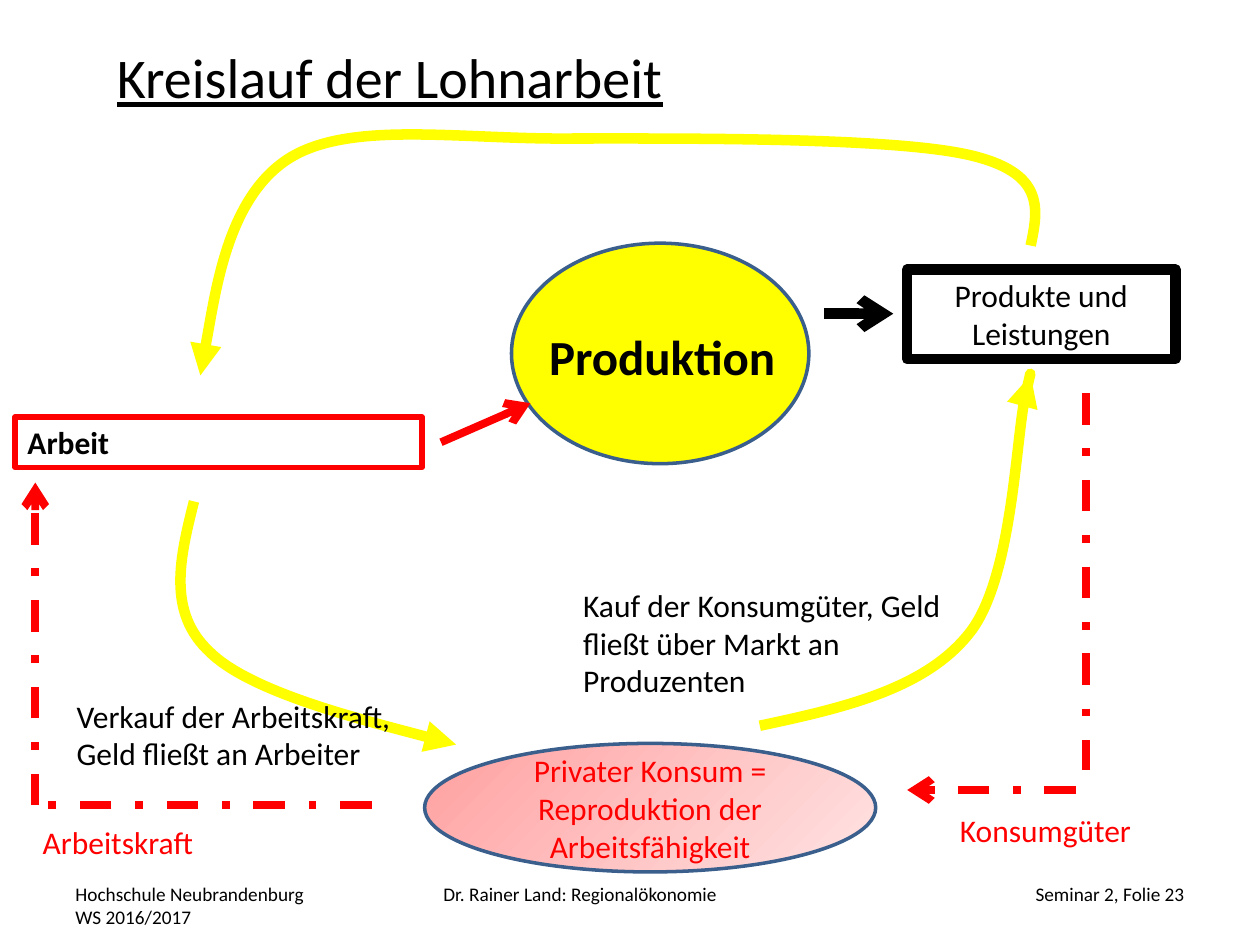
"""Builds the slide on the cycle of wage labour."""
import pptx
import pptx.util
import pptx.dml.color
import pptx.enum.dml
import pptx.enum.shapes
import pptx.enum.text
import pptx.oxml
import pptx.oxml.ns

Inches = pptx.util.Inches
Pt = pptx.util.Pt
MSO_SHAPE = pptx.enum.shapes.MSO_SHAPE
ALIGN = pptx.enum.text.PP_ALIGN
ANCHOR = pptx.enum.text.MSO_ANCHOR
DASH = pptx.enum.dml.MSO_LINE.DASH_DOT
NAMESPACE = 'xmlns:a="http://schemas.openxmlformats.org/drawingml/2006/main"'

COLORS = {"black": "000000", "red": "FF0000", "yellow": "FFFF00", "blue": "3A5F8C",
          "rose": "FFA0A0", "pale": "FFE3E3"}

HEADINGS = [
    ("Kreislauf der Lohnarbeit", (0.83, 0.3, 8.67, 0.61),
     {"size": 32, "underline": True, "anchor": ANCHOR.MIDDLE}),
    ("Hochschule Neubrandenburg\vWS 2016/2017", (0.5, 6.95, 2.33, 0.4), {"size": 11}),
    ("Dr. Rainer Land: Regionalökonomie", (3.42, 6.95, 3.17, 0.4), {"size": 11}),
    ("Seminar 2, Folie 23", (7.17, 6.95, 2.33, 0.4), {"size": 11, "align": ALIGN.RIGHT}),
]

SHAPES = [
    {"kind": MSO_SHAPE.OVAL, "box": (4.06, 1.93, 2.36, 1.75), "fill": ["yellow"],
     "line": ("blue", 2)},
    {"kind": MSO_SHAPE.RECTANGLE, "box": (0.12, 3.31, 3.23, 0.4), "line": ("red", 3),
     "text": "Arbeit", "style": {"bold": True}},
    {"kind": MSO_SHAPE.RECTANGLE, "box": (7.2, 2.14, 2.13, 0.71), "line": ("black", 6),
     "text": "Produkte und Leistungen", "style": {"align": ALIGN.CENTER}},
    {"kind": MSO_SHAPE.OVAL, "box": (3.37, 5.9, 3.58, 1.02), "fill": ["rose", "pale"],
     "line": ("blue", 2), "text": "Privater Konsum = Reproduktion der Arbeitsfähigkeit",
     "style": {"color": "red", "align": ALIGN.CENTER, "anchor": ANCHOR.MIDDLE}},
]

LINES = [
    ((3.5, 3.51), (4.21, 3.2), "red", 4.5, None, "arrow"),
    ((6.54, 2.49), (7.09, 2.49), "black", 6, None, "arrow"),
    ((8.62, 3.12), (8.62, 6.11), "red", 4.5, DASH, None),
    ((8.54, 6.27), (7.2, 6.27), "red", 4.5, DASH, "arrow"),
    ((0.28, 6.39), (0.28, 3.83), "red", 4.5, DASH, "arrow"),
    ((2.95, 6.39), (0.28, 6.39), "red", 4.5, DASH, None),
]

MONEY_FLOWS = [
    [(6.03, 5.76), (6.69, 5.62), (7.34, 5.47), (7.69, 5.03), (8.04, 4.6), (8.06, 3.47),
     (8.14, 3.13), (8.22, 2.78), (8.18, 2.98), (8.18, 2.98)],
    [(8.18, 1.95), (8.24, 1.66), (8.3, 1.37), (7.69, 1.23), (7.08, 1.09), (5.45, 1.1),
     (4.55, 1.1), (3.65, 1.11), (2.78, 0.95), (2.29, 1.26), (1.79, 1.58), (1.59, 2.98),
     (1.59, 2.98)],
    [(1.54, 3.98), (1.43, 4.42), (1.32, 4.86), (1.67, 5.18), (2.01, 5.51), (3.62, 5.91),
     (3.62, 5.91)],
]

LABELS = [
    ("Produktion", (4.21, 2.54, 2.09, 0.57),
     {"size": 28, "bold": True, "align": ALIGN.CENTER}),
    ("Konsumgüter", (7.52, 6.39, 1.81, 0.4), {"color": "red"}),
    ("Arbeitskraft", (0.24, 6.48, 2.68, 0.4), {"color": "red"}),
    ("Kauf der Konsumgüter, Geld fließt über Markt an Produzenten",
     (4.53, 4.6, 3.23, 1.01), {}),
    ("Verkauf der Arbeitskraft, Geld fließt an Arbeiter", (0.51, 5.48, 2.76, 0.71), {}),
]


def rgb(name):
    return pptx.dml.color.RGBColor.from_string(COLORS[name])


def write(shape, text, size=18, color="black", bold=False, underline=False,
          align=ALIGN.LEFT, anchor=ANCHOR.TOP):
    frame = shape.text_frame
    frame.word_wrap = True
    frame.vertical_anchor = anchor
    paragraph = frame.paragraphs[0]
    paragraph.text = text
    paragraph.alignment = align
    font = paragraph.font
    font.name, font.size, font.bold = "Calibri", Pt(size), bold
    font.color.rgb = rgb(color)
    if underline:
        for run in paragraph.runs:
            run.font.underline = True


def add_texts(slide, texts):
    for text, box, style in texts:
        write(slide.shapes.add_textbox(*map(Inches, box)), text, **style)


def style_line(line, color, width, dash=None, head=None):
    line.color.rgb = rgb(color)
    line.width = Pt(width)
    if dash:
        line.dash_style = dash
    if head:
        line._get_or_add_ln().append(
            pptx.oxml.parse_xml(f'<a:tailEnd {NAMESPACE} type="{head}"/>'))


def add_figure(slide, kind, box, line, fill=(), text="", style=None):
    shape = slide.shapes.add_shape(kind, *map(Inches, box))
    shape.shadow.inherit = False
    style_line(shape.line, *line)
    if len(fill) == 2:
        shape.fill.gradient()
        shape.fill.gradient_angle = 315
        for stop, color in zip(shape.fill.gradient_stops, fill):
            stop.color.rgb = rgb(color)
    elif fill:
        shape.fill.solid()
        shape.fill.fore_color.rgb = rgb(fill[0])
    else:
        shape.fill.background()
    if text:
        write(shape, text, **(style or {}))


def add_arrow(slide, start, end, color, width, dash, head):
    connector = slide.shapes.add_connector(
        pptx.enum.shapes.MSO_CONNECTOR.STRAIGHT, *map(Inches, start + end))
    connector._element.spPr.append(pptx.oxml.parse_xml(f"<a:effectLst {NAMESPACE}/>"))
    style_line(connector.line, color, width, dash, head)


def add_money_flow(slide, controls):
    points = [tuple(map(Inches, point)) for point in controls]
    builder = slide.shapes.build_freeform(*points[0])
    builder.add_line_segments(points[1:] + points[-1:], close=False)
    shape = builder.convert_to_shape()
    segments = list(shape._element.iter(pptx.oxml.ns.qn("a:lnTo")))
    for index in range(0, len(controls) - 1, 3):
        curve = pptx.oxml.parse_xml(f"<a:cubicBezTo {NAMESPACE}/>")
        segments[index].addprevious(curve)
        for segment in segments[index:index + 3]:
            curve.append(segment[0])
            segment.getparent().remove(segment)
    shape.shadow.inherit = False
    shape.fill.background()
    style_line(shape.line, "yellow", 6, head="triangle")


def main():
    presentation = pptx.Presentation()
    presentation.slide_width, presentation.slide_height = Inches(10), Inches(7.5)
    slide = presentation.slides.add_slide(presentation.slide_layouts[6])
    add_texts(slide, HEADINGS)
    for figure in SHAPES:
        add_figure(slide, **figure)
    for line in LINES:
        add_arrow(slide, *line)
    for controls in MONEY_FLOWS:
        add_money_flow(slide, controls)
    add_texts(slide, LABELS)
    presentation.save("out.pptx")


if __name__ == "__main__":
    main()
